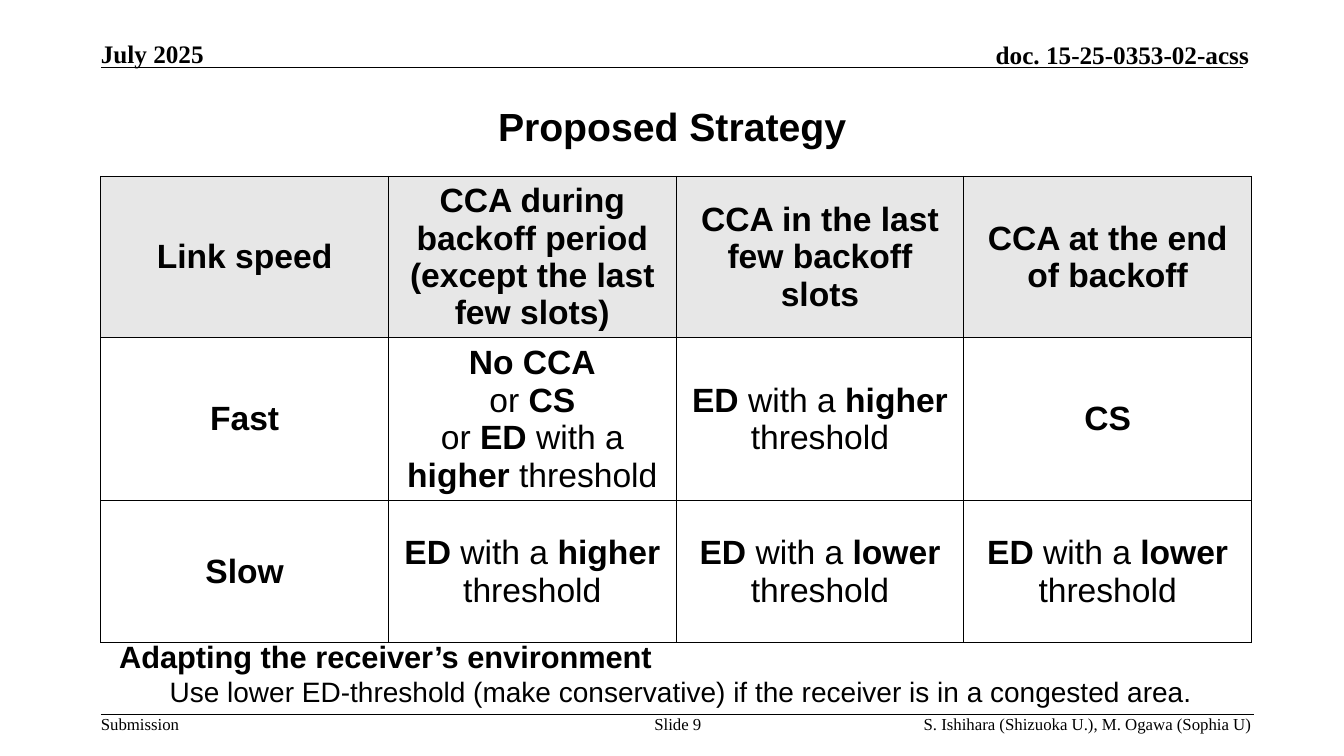
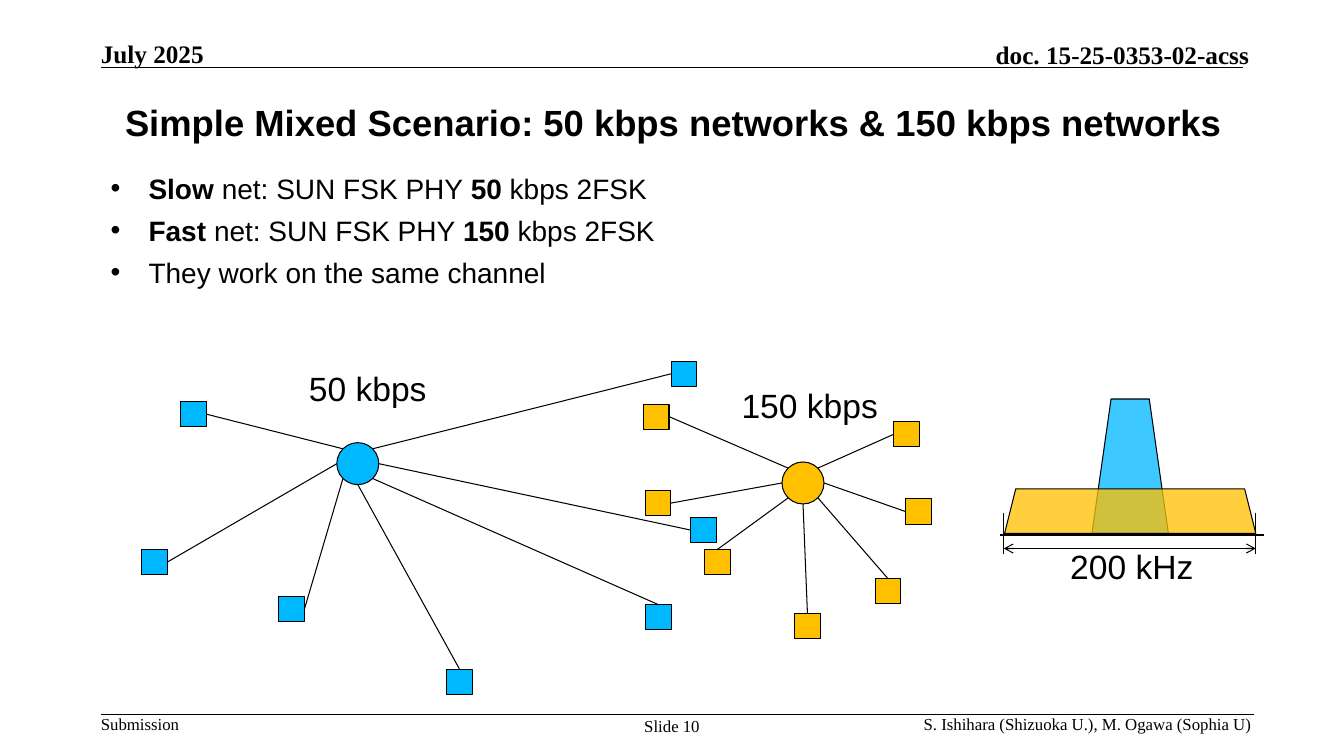
from math import cos, radians, sin

from lxml.etree import SubElement
from pptx import Presentation
from pptx.dml.color import RGBColor
from pptx.enum.shapes import MSO_CONNECTOR as Connector, MSO_SHAPE as Preset
from pptx.enum.text import MSO_ANCHOR as Anchor, PP_ALIGN as Align
from pptx.oxml.ns import qn
from pptx.util import Emu, Pt

COLUMNS, ROWS = 160, 90
STEP = 76200
BLACK, GREY, BLUE, GOLD = "000000", "E7E7E7", "00B8FF", "FFC000"
SANS, SERIF = "Arial", "Times New Roman"
TOP, LEFT, RIGHT = 0, 1, 3
LEFT_EDGE, RIGHT_EDGE = 12, 149
HEADER_LINE, FOOTER_LINE = 8.04, 85.05
HUB_SIZE = 5
NODE_SIZE = (3.05, 3)
FLUSH = {"margin_left": 0, "margin_right": 0, "margin_top": 0, "margin_bottom": 0}
CELL_FORMAT = {"vertical_anchor": Anchor.MIDDLE, "margin_top": 0, "margin_bottom": 0}

TABLE_ROWS = [
    ["*Link speed*", "*CCA during backoff period*\n*(except the last few slots)*",
     "*CCA in the last few backoff slots*", "*CCA at the end of backoff*"],
    ["*Fast*", "*No CCA*\nor* CS*\nor *ED* with a *higher* threshold",
     "*ED* with a *higher* threshold", "*CS*"],
    ["*Slow*", "*ED* with a *higher* threshold",
     "*ED* with a *lower* threshold", "*ED* with a *lower* threshold"],
]
ROW_HEIGHTS = [19.05, 19.4, 16.9]
COLUMN_WIDTH = 34.25

SLOW_NODES = [
    (16.9, 65.4, RIGHT, 2), (33.2, 71, RIGHT, 3), (53.2, 79.7, TOP, 4),
    (76.9, 72, TOP, 5), (82.2, 61.6, LEFT, 6), (79.9, 43, LEFT, 7),
    (21.5, 47.8, RIGHT, 1),
]
FAST_NODES = [
    (76.6, 48.1, RIGHT, 1), (76.8, 58.4, RIGHT, 2), (83.9, 65.4, TOP, 3),
    (94.6, 73, TOP, 4), (104.2, 68.9, TOP, 5), (107.8, 59.4, LEFT, 6),
    (106.4, 50.2, LEFT, 7),
]


def grid(*lengths):
    return [Emu(round(length * STEP)) for length in lengths]


def paint(color_format, color):
    color_format.rgb = RGBColor.from_string(color)


def apply(target, values):
    for name, value in values.items():
        setattr(target, name, value)


def write(frame, text, size, font=SANS, align=Align.LEFT):
    for index, line in enumerate(text.split("\n")):
        para = frame.add_paragraph() if index else frame.paragraphs[0]
        para.alignment = align
        for part, words in enumerate(line.split("*")):
            if words:
                span = para.add_run()
                span.text = words
                apply(span.font, {"name": font, "size": Pt(size), "bold": part % 2 == 1})
                paint(span.font.color, BLACK)


def add_text(page, area, text, size, font=SANS, align=Align.LEFT, **frame_values):
    frame = page.shapes.add_textbox(*grid(*area)).text_frame
    apply(frame, {"word_wrap": True, **frame_values})
    write(frame, text, size, font, align)
    return frame


def indent(para, margin, first, bullet=None):
    properties = para._p.get_or_add_pPr()
    for name, length in zip(("marL", "indent"), grid(margin, first)):
        properties.set(name, str(length))
    if bullet:
        SubElement(properties, qn("a:buFont"), typeface=SANS)
        SubElement(properties, qn("a:buChar"), char=bullet)


def add_figure(page, preset, area, color, opacity=100):
    shape = page.shapes.add_shape(preset, *grid(*area))
    shape.shadow.inherit = False
    shape.fill.solid()
    paint(shape.fill.fore_color, color)
    if opacity < 100:
        fill = next(shape.element.iter(qn("a:srgbClr")))
        SubElement(fill, qn("a:alpha"), val=str(opacity * 1000))
    shape.line.width = Pt(0.75)
    paint(shape.line.color, BLACK)
    return shape


def add_line(page, start, end, width=0.75, arrows=False):
    line = page.shapes.add_connector(Connector.STRAIGHT, *grid(*start, *end))
    line.line.width = Pt(width)
    paint(line.line.color, BLACK)
    if arrows:
        outline = line.line._get_or_add_ln()
        for name in ("a:headEnd", "a:tailEnd"):
            SubElement(outline, qn(name), type="arrow")
    SubElement(line.element.spPr, qn("a:effectLst"))
    return line


def add_page(deck, title, title_area, title_size, number, number_corner):
    page = deck.slides.add_slide(deck.slide_layouts[6])
    add_line(page, (LEFT_EDGE, HEADER_LINE), (148, HEADER_LINE), 1)
    add_line(page, (LEFT_EDGE, FOOTER_LINE), (RIGHT_EDGE + 0.3, FOOTER_LINE), 1)
    add_text(page, (LEFT_EDGE, 4.6, 21, 3.6), "*July 2025*", 18, SERIF, **FLUSH)
    add_text(page, (87.5, 4.7, 61.2, 3.6), "*doc. 15-25-0353-02-acss*", 18, SERIF,
             Align.RIGHT, vertical_anchor=Anchor.BOTTOM, **FLUSH)
    add_text(page, (LEFT_EDGE, 85, 9.5, 2.4), "Submission", 12, SERIF,
             word_wrap=False, **FLUSH)
    add_text(page, (109.5, 85, 39.5, 2.4), "S. Ishihara (Shizuoka U.), M. Ogawa (Sophia U)",
             12, SERIF, Align.RIGHT, word_wrap=False, **FLUSH)
    add_text(page, (*number_corner, 9.2, 4.8), f"Slide {number}", 12, SERIF,
             Align.CENTER, **FLUSH)
    add_text(page, title_area, f"*{title}*", title_size, align=Align.CENTER,
             vertical_anchor=Anchor.MIDDLE)
    return page


def add_border(cell):
    properties = cell._tc.get_or_add_tcPr()
    for side in ("a:lnL", "a:lnR", "a:lnT", "a:lnB"):
        edge = SubElement(properties, qn(side), w=str(Pt(1)))
        SubElement(SubElement(edge, qn("a:solidFill")), qn("a:srgbClr"), val=BLACK)


def add_strategy_table(page):
    count = len(TABLE_ROWS[0])
    area = grid(LEFT_EDGE, 21, COLUMN_WIDTH * count, sum(ROW_HEIGHTS))
    table = page.shapes.add_table(len(TABLE_ROWS), count, *area).table
    apply(table, {"first_row": False, "horz_banding": False})
    for column in table.columns:
        column.width = grid(COLUMN_WIDTH)[0]
    for row, height in zip(table.rows, grid(*ROW_HEIGHTS)):
        row.height = height
    for row_index, texts in enumerate(TABLE_ROWS):
        for column_index, text in enumerate(texts):
            cell = table.cell(row_index, column_index)
            apply(cell, CELL_FORMAT)
            add_border(cell)
            if row_index:
                cell.fill.background()
            else:
                cell.fill.solid()
                paint(cell.fill.fore_color, GREY)
            write(cell.text_frame, text, 24, align=Align.CENTER)


def add_network(page, center, color, nodes):
    center_x, center_y = center
    radius = HUB_SIZE / 2
    add_figure(page, Preset.OVAL,
               (center_x - radius, center_y - radius, HUB_SIZE, HUB_SIZE), color)
    for left, top, side, eighth in nodes:
        node = add_figure(page, Preset.RECTANGLE, (left, top, *NODE_SIZE), color)
        angle = radians(45 * eighth)
        start = (center_x - radius * sin(angle), center_y - radius * cos(angle))
        add_line(page, start, (left, top)).end_connect(node, side)


def add_spectrum(page):
    first, last = 119.5, 149.5
    add_figure(page, Preset.TRAPEZOID, (130, 47.5, 9.1, 16), BLUE, 76)
    add_figure(page, Preset.TRAPEZOID, (119.6, 58.2, 29.9, 5.3), GOLD, 76)
    add_line(page, (119, 63.7), (150.5, 63.7), 1.25)
    for edge in (first, last):
        add_line(page, (edge, 66), (edge, 61.1))
    add_line(page, (first, 65.3), (last, 65.3), arrows=True)
    add_text(page, (126.1, 64.4, 17.3, 6), "200 kHz", 24, align=Align.CENTER)


def build_strategy(deck):
    page = add_page(deck, "Proposed Strategy", (LEFT_EDGE, 9, 136, 12), 28, 9, (76.1, 85))
    add_strategy_table(page)
    note = add_text(page, (13, 75.3, 136, 9.7), "*Adapting the receiver’s environment*\n"
                    "Use lower ED-threshold (make conservative) if the receiver is in a "
                    "congested area.", 20)
    note.paragraphs[0].runs[0].font.size = Pt(22)
    indent(note.paragraphs[1], 9.7, -3.7)


def build_scenario(deck):
    page = add_page(deck, "Simple Mixed Scenario: 50 kbps networks & 150 kbps networks",
                    (11, 8.5, 138.5, 12), 26, 10, (75.4, 85.2))
    body = add_text(page, (LEFT_EDGE, 19.8, 136, 15),
                    "*Slow* net: SUN FSK PHY *50* kbps 2FSK\n"
                    "*Fast* net: SUN FSK PHY *150* kbps 2FSK\n"
                    "They work on the same channel", 20)
    for para in body.paragraphs:
        para.space_before = Pt(6)
        indent(para, 4.5, -4.5, "•")
    add_network(page, (42.6, 55.2), BLUE, SLOW_NODES)
    add_network(page, (95.6, 57.5), GOLD, FAST_NODES)
    add_text(page, (35.6, 43.2, 16.6, 6), "50 kbps", 24, word_wrap=False)
    add_text(page, (87.1, 45.2, 18.8, 6), "150 kbps", 24, word_wrap=False)
    add_spectrum(page)


def main():
    deck = Presentation()
    deck.slide_width, deck.slide_height = grid(COLUMNS, ROWS)
    build_strategy(deck)
    build_scenario(deck)
    deck.save("out.pptx")


if __name__ == "__main__":
    main()
